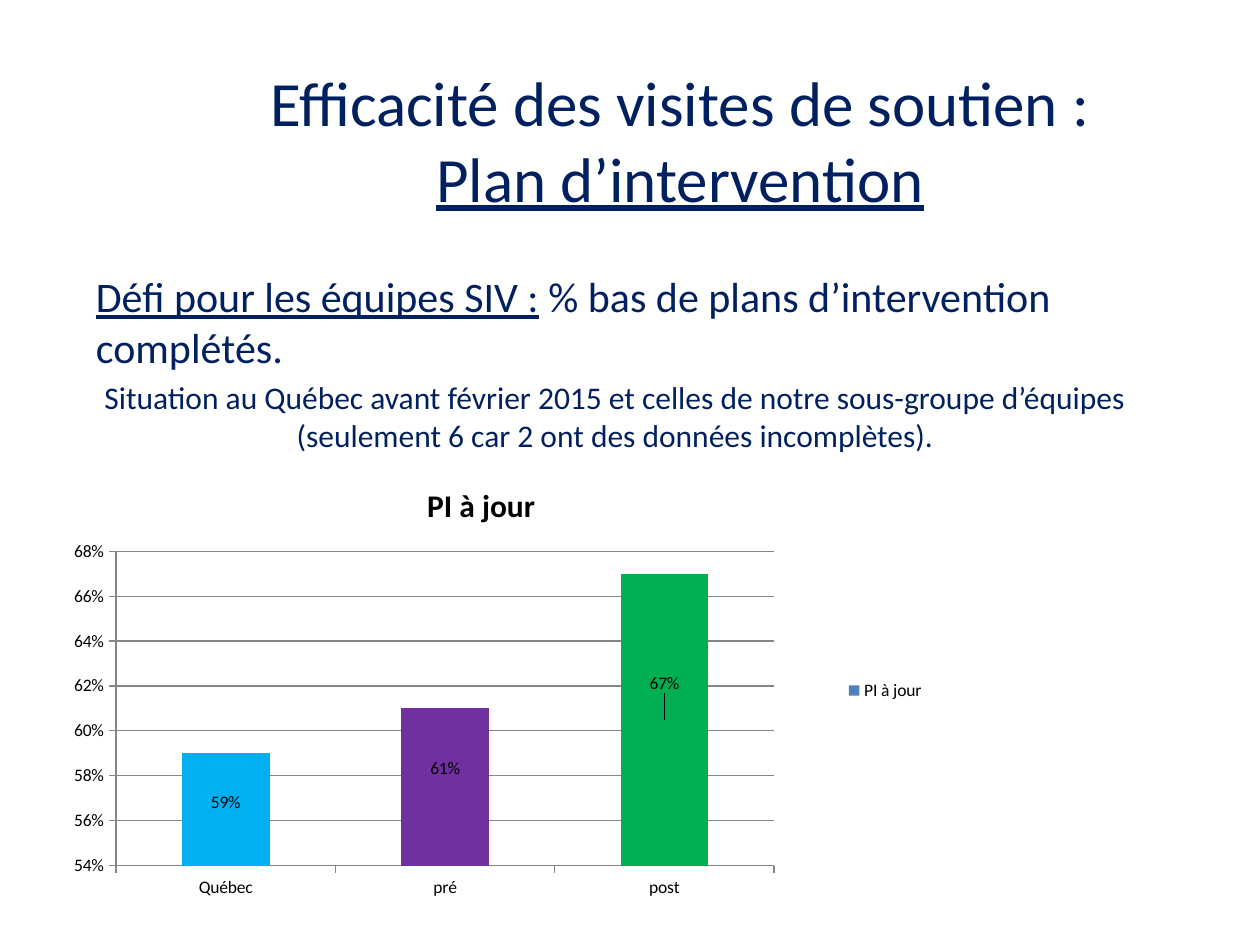
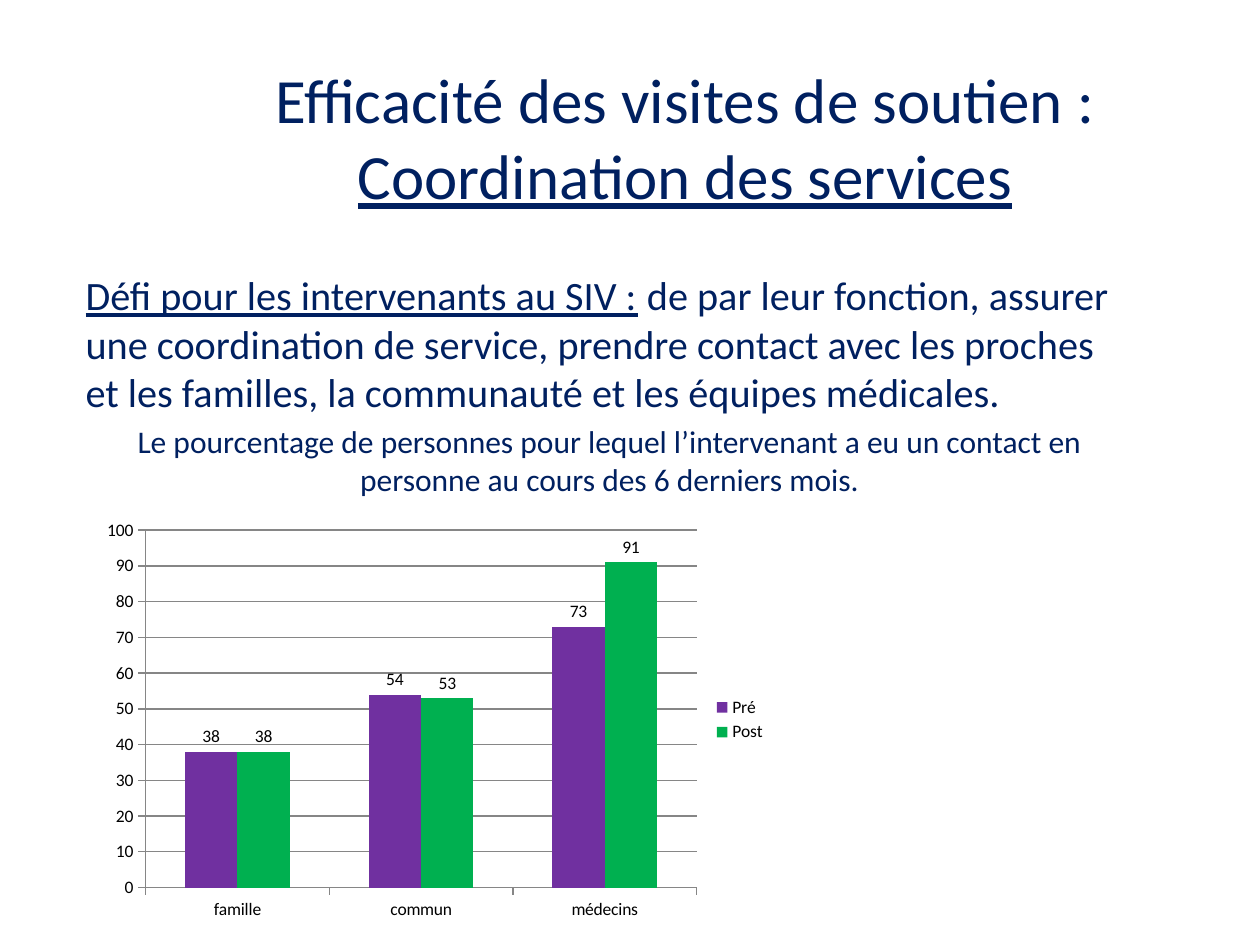
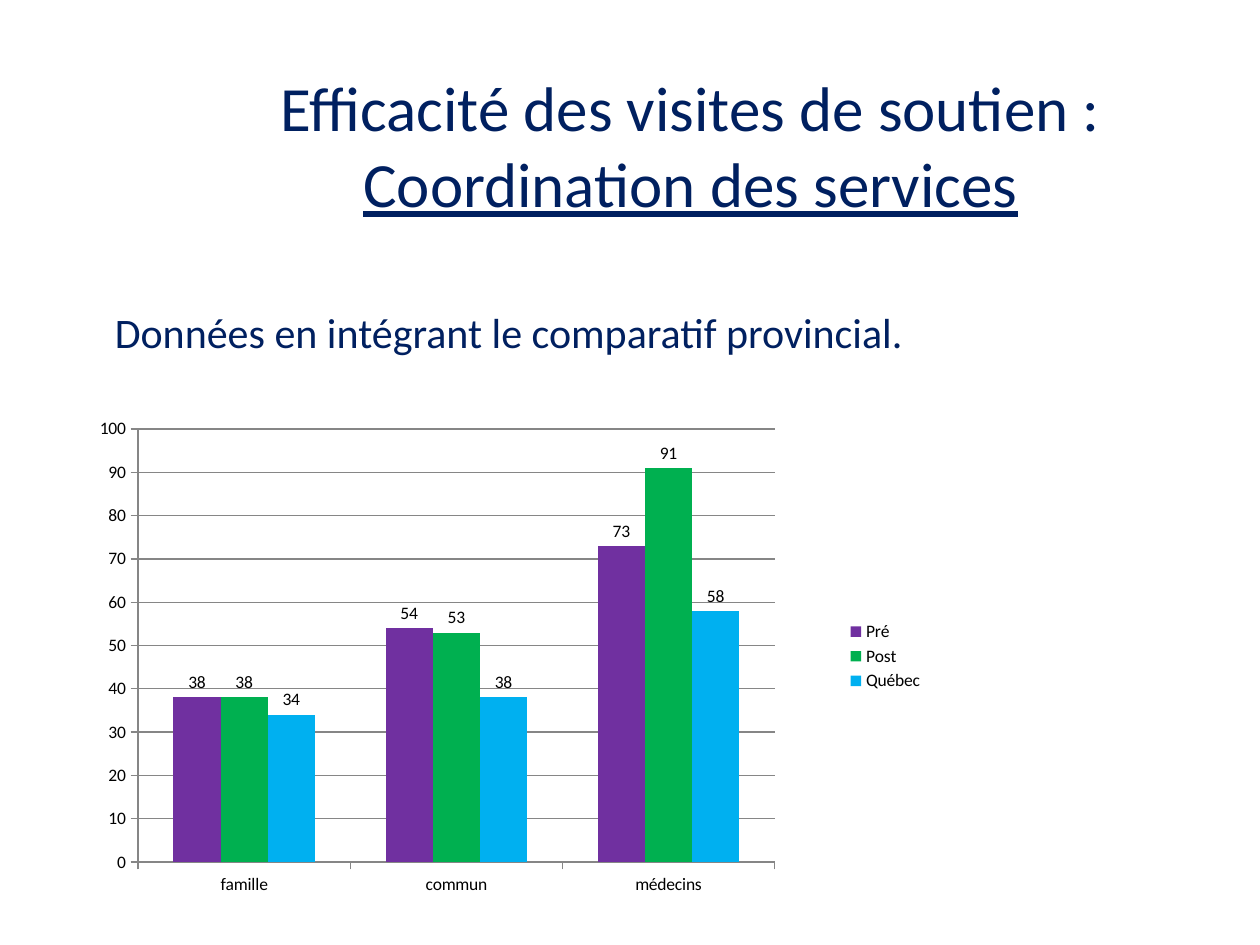
from lxml import etree
from pptx import Presentation
from pptx.chart.data import CategoryChartData
from pptx.dml.color import RGBColor
from pptx.enum import chart as chart_enum, text
from pptx.oxml.ns import qn
from pptx.util import Cm, Pt

FONT = "Calibri"
NAVY = RGBColor(0x00, 0x20, 0x60)
BLACK = RGBColor(0x00, 0x00, 0x00)
GRID_GRAY = RGBColor(0x86, 0x86, 0x86)
LEGEND_BLUE = RGBColor(0x4F, 0x81, 0xBD)
PURPLE = RGBColor(0x70, 0x30, 0xA0)
GREEN = RGBColor(0x00, 0xB0, 0x50)
SKY = RGBColor(0x00, 0xB0, 0xF0)

SERVICES = ["famille", "commun", "médecins"]
BEFORE = ("Pré", [38, 54, 73], PURPLE)
AFTER = ("Post", [38, 53, 91], GREEN)
PROVINCE = ("Québec", [34, 38, 58], SKY)


def place(shape, box):
    shape.left, shape.top, shape.width, shape.height = (Cm(length) for length in box)


def style_font(font, size, color):
    font.name = FONT
    font.size = Pt(size)
    font.color.rgb = color


def fill_title(slide, box, topic):
    title = slide.shapes.title
    place(title, box)
    frame = title.text_frame
    frame.auto_size = text.MSO_AUTO_SIZE.NONE
    frame.vertical_anchor = text.MSO_ANCHOR.MIDDLE
    paragraph = frame.paragraphs[0]
    paragraph.alignment = text.PP_ALIGN.CENTER
    style_font(paragraph.font, 36, NAVY)
    paragraph.add_run().text = "Efficacité des visites de soutien :"
    paragraph.add_line_break()
    topic_run = paragraph.add_run()
    topic_run.text = topic
    topic_run.font.underline = True


def fill_body(slide, box, statement, size=24, lead="", detail=""):
    """Write a statement with an underlined lead, then a centred detail."""
    body = slide.placeholders[1]
    place(body, box)
    frame = body.text_frame
    frame.auto_size = text.MSO_AUTO_SIZE.NONE
    paragraph = frame.paragraphs[0]
    if lead:
        lead_run = paragraph.add_run()
        lead_run.text = lead
        lead_run.font.underline = True
    paragraph.add_run().text = statement
    style_paragraph(paragraph, size, text.PP_ALIGN.LEFT, 0)
    if detail:
        paragraph = frame.add_paragraph()
        paragraph.text = detail
        style_paragraph(paragraph, 18, text.PP_ALIGN.CENTER, 3.6)


def style_paragraph(paragraph, size, alignment, space_before):
    properties = paragraph._p.get_or_add_pPr()
    properties.set("marL", "0")
    properties.set("indent", "0")
    etree.SubElement(properties, qn("a:buNone"))
    paragraph.alignment = alignment
    paragraph.space_before = Pt(space_before)
    style_font(paragraph.font, size, NAVY)


def manual_layout(**settings):
    layout = etree.Element(qn("c:layout"))
    manual = etree.SubElement(layout, qn("c:manualLayout"))
    for name, value in settings.items():
        etree.SubElement(manual, qn(f"c:{name}")).set("val", str(value))
    return layout


def set_plot_area(chart, area):
    """Place the inner plot area, in fractions of the chart."""
    plot_area = chart._chartSpace.find(".//" + qn("c:plotArea"))
    for layout in plot_area.findall(qn("c:layout")):
        plot_area.remove(layout)
    x, y, width, height = area
    plot_area.insert(0, manual_layout(
        layoutTarget="inner", xMode="edge", yMode="edge", x=x, y=y, w=width, h=height))


def style_axes(chart, scale):
    value_axis, category_axis = chart.value_axis, chart.category_axis
    value_axis.minimum_scale, value_axis.maximum_scale, value_axis.major_unit = scale
    value_axis.has_major_gridlines = True
    for axis in (value_axis, category_axis):
        axis.major_tick_mark = chart_enum.XL_TICK_MARK.OUTSIDE
    for lines in (value_axis, category_axis, value_axis.major_gridlines):
        lines.format.line.color.rgb = GRID_GRAY
        lines.format.line.width = Pt(0.75)


def add_column_chart(slide, box, area, categories, series_list,
                     scale=(0, 100, 10), number_format="General"):
    data = CategoryChartData(number_format=number_format)
    data.categories = categories
    for name, values, _ in series_list:
        data.add_series(name, values)
    chart = slide.shapes.add_chart(
        chart_enum.XL_CHART_TYPE.COLUMN_CLUSTERED,
        *(Cm(length) for length in box), data).chart
    style_font(chart.font, 10, BLACK)
    chart.has_title = False
    chart.has_legend = True
    chart.legend.position = chart_enum.XL_LEGEND_POSITION.RIGHT
    chart.legend.include_in_layout = False
    set_plot_area(chart, area)
    style_axes(chart, scale)
    chart.value_axis.tick_labels.number_format = number_format
    chart.value_axis.tick_labels.number_format_is_linked = False

    plot = chart.plots[0]
    plot.vary_by_categories = False
    plot.gap_width = 150
    plot.overlap = 0
    for series, (_, _, color) in zip(plot.series, series_list):
        series.format.fill.solid()
        series.format.fill.fore_color.rgb = color
        labels = series.data_labels
        labels.show_value = True
        labels.number_format = number_format
        labels.number_format_is_linked = False
        labels.position = chart_enum.XL_LABEL_POSITION.OUTSIDE_END
    return chart


def add_chart_title(chart, title):
    chart.has_title = True
    paragraph = chart.chart_title.text_frame.paragraphs[0]
    paragraph.text = title
    style_font(paragraph.font, 18, BLACK)
    paragraph.font.bold = True
    chart.chart_title.include_in_layout = False


def color_points(series, colors, label_shifts):
    """Colour each column and raise its label from the column's centre."""
    for index, color in enumerate(colors):
        point = series.points[index]
        point.format.fill.solid()
        point.format.fill.fore_color.rgb = color
        point.data_label.position = chart_enum.XL_LABEL_POSITION.CENTER
    labels = series._element.iter(qn("c:dLbl"))
    for label, shift in zip(labels, label_shifts):
        label.insert(1, manual_layout(x=0, y=shift))


def add_content_slide(presentation):
    return presentation.slides.add_slide(presentation.slide_layouts[1])


def add_plan_slide(presentation):
    slide = add_content_slide(presentation)
    fill_title(slide, (5.1, 1.32, 17.22, 2.97), "Plan d’intervention")
    fill_body(
        slide, (1.68, 5.33, 21.44, 4.88),
        " % bas de plans d’intervention complétés.",
        lead="Défi pour les équipes SIV :",
        detail="Situation au Québec avant février 2015 et celles de notre sous-groupe "
               "d’équipes (seulement 6 car 2 ont des données incomplètes).")
    chart = add_column_chart(
        slide, (0.5, 9.32, 18.4, 9.2), (0.1, 0.195, 0.721, 0.689),
        ["Québec", "pré", "post"], [("PI à jour", [0.59, 0.61, 0.67], LEGEND_BLUE)],
        scale=(0.54, 0.68, 0.02), number_format="0%")
    add_chart_title(chart, "PI à jour")
    color_points(chart.plots[0].series[0], (SKY, PURPLE, GREEN), (-0.015, -0.04, -0.08))


def add_coordination_slide(presentation):
    slide = add_content_slide(presentation)
    fill_title(slide, (5.1, 1.57, 17.42, 2.36), "Coordination des services")
    fill_body(
        slide, (1.47, 5.33, 21.64, 5.49),
        " de par leur fonction, assurer une coordination de service, prendre contact "
        "avec les proches et les familles, la communauté et les équipes médicales.",
        size=23, lead="Défi pour les intervenants au SIV :",
        detail="Le pourcentage de personnes pour lequel l’intervenant a eu un contact "
               "en personne au cours des 6 derniers mois.")
    add_column_chart(slide, (1.9, 10.31, 13.8, 8.4), (0.075, 0.045, 0.805, 0.858),
                     SERVICES, [BEFORE, AFTER])


def add_comparison_slide(presentation):
    slide = add_content_slide(presentation)
    fill_title(slide, (5.31, 1.32, 17.22, 3.18), "Coordination des services")
    fill_body(slide, (2.06, 6.05, 19.43, 2.49),
              "Données en intégrant le comparatif provincial.")
    add_column_chart(slide, (1.27, 8.13, 17.6, 10.2), (0.086, 0.051, 0.729, 0.856),
                     SERVICES, [BEFORE, AFTER, PROVINCE])


def main():
    presentation = Presentation()
    presentation.slide_width, presentation.slide_height = Cm(25.4), Cm(19.05)
    add_plan_slide(presentation)
    add_coordination_slide(presentation)
    add_comparison_slide(presentation)
    presentation.save("out.pptx")


if __name__ == "__main__":
    main()
